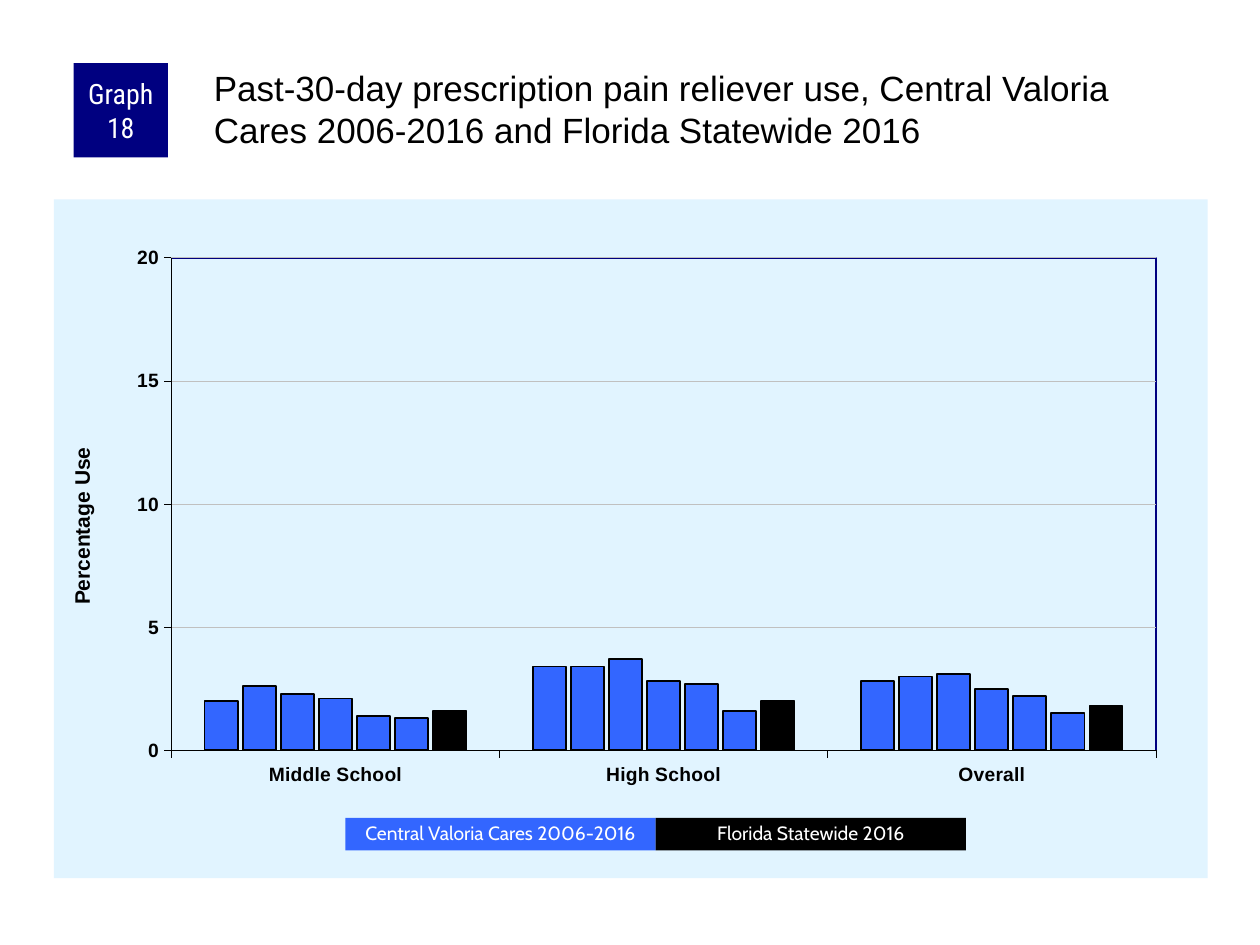
from dataclasses import dataclass

from pptx import Presentation
from pptx.chart.data import CategoryChartData
from pptx.dml.color import RGBColor
from pptx.enum.chart import XL_CHART_TYPE, XL_TICK_MARK
from pptx.enum.shapes import MSO_SHAPE
from pptx.enum.text import MSO_ANCHOR, MSO_AUTO_SIZE, PP_ALIGN
from pptx.oxml import parse_xml
from pptx.oxml.ns import nsdecls, qn
from pptx.util import Inches, Pt


@dataclass(frozen=True)
class Theme:
    black: str = "000000"
    white: str = "FFFFFF"
    navy: str = "000080"
    blue: str = "3366FF"
    pale: str = "E1F4FF"
    gray: str = "C0C0C0"
    sans: str = "Arial"
    slim: str = "Roboto Condensed"
    round: str = "Cabin"
    head: int = 20
    badge: int = 16
    label: int = 12
    small: int = 11
    base: int = 8


def apply(item, form):
    for name, value in form.items():
        setattr(item, name, value)


def ink(font, face, size, color, bold=False):
    apply(font, dict(name=face, size=Pt(size), bold=bold))
    font.color.rgb = RGBColor.from_string(color)


def stroke(line, color, width):
    line.color.rgb = RGBColor.from_string(color)
    line.width = Pt(width)


def paint(fill, color):
    fill.solid()
    fill.fore_color.rgb = RGBColor.from_string(color)


def layout(x, y, w=None, h=None, inner=False):
    marks = [("layoutTarget", "inner")] if inner else []
    marks += [("xMode", "edge"), ("yMode", "edge"), ("x", x), ("y", y)]
    marks += [(key, size) for key, size in (("w", w), ("h", h)) if size]
    body = "".join(f'<c:{key} val="{val}"/>' for key, val in marks)
    return parse_xml(f'<c:layout {nsdecls("c")}><c:manualLayout>{body}'
                     '</c:manualLayout></c:layout>')


def look(fill, line):
    return parse_xml(f'<c:spPr {nsdecls("c", "a")}>{fill}{line}</c:spPr>')


def solid(color):
    return f'<a:solidFill><a:srgbClr val="{color}"/></a:solidFill>'


def drop(parent, tag):
    for node in parent.findall(qn(tag)):
        parent.remove(node)


class Deck:
    COLS, ROWS = 120, 90

    def __init__(self, theme):
        self.theme = theme
        self.show = Presentation()
        apply(self.show, dict(slide_width=Inches(10), slide_height=Inches(7.5)))
        self.slide = self.show.slides.add_slide(self.show.slide_layouts[5])

    def place(self, col, row, wide, high):
        across = self.show.slide_width / self.COLS
        down = self.show.slide_height / self.ROWS
        return [round(n) for n in
                (col * across, row * down, wide * across, high * down)]

    def title(self, text, *grid):
        shape = self.slide.shapes.title
        apply(shape, dict(zip(("left", "top", "width", "height"),
                              self.place(*grid))))
        frame = shape.text_frame
        apply(frame, dict(text=text, word_wrap=True,
                          auto_size=MSO_AUTO_SIZE.NONE,
                          vertical_anchor=MSO_ANCHOR.TOP,
                          margin_left=Inches(0.03), margin_top=Inches(0.03),
                          margin_right=0, margin_bottom=0))
        para = frame.paragraphs[0]
        apply(para, dict(alignment=PP_ALIGN.LEFT, line_spacing=1.0))
        ink(para.runs[0].font, self.theme.sans, self.theme.head,
            self.theme.black)

    def box(self, text, grid, color, face, size, space=1.0):
        shape = self.slide.shapes.add_shape(MSO_SHAPE.RECTANGLE,
                                            *self.place(*grid))
        shape.shadow.inherit = False
        paint(shape.fill, color)
        shape.line.fill.background()
        frame = shape.text_frame
        apply(frame, dict(text=text, word_wrap=True,
                          vertical_anchor=MSO_ANCHOR.MIDDLE,
                          margin_left=Inches(0.05), margin_right=Inches(0.05),
                          margin_top=0, margin_bottom=0))
        para = frame.paragraphs[0]
        apply(para, dict(alignment=PP_ALIGN.CENTER, line_spacing=space))
        ink(para.runs[0].font, face, size, self.theme.white)

    def bars(self, cats, rows, colors, label, *grid):
        theme = self.theme
        data = CategoryChartData()
        data.categories = cats
        for num, row in enumerate(rows, 1):
            data.add_series(f"Series {num}", row)
        chart = self.slide.shapes.add_chart(
            XL_CHART_TYPE.COLUMN_CLUSTERED, *self.place(*grid), data).chart
        apply(chart, dict(has_legend=False, has_title=False))
        ink(chart.font, theme.sans, theme.base, theme.black)

        plot = chart.plots[0]
        apply(plot, dict(gap_width=200, overlap=-15, vary_by_categories=False))
        for series, color in zip(plot.series, colors):
            paint(series.format.fill, color)
            stroke(series.format.line, theme.black, 1)

        for axis in (chart.category_axis, chart.value_axis):
            apply(axis, dict(major_tick_mark=XL_TICK_MARK.OUTSIDE,
                             minor_tick_mark=XL_TICK_MARK.NONE))
            ink(axis.tick_labels.font, theme.sans, theme.small, theme.black,
                True)
            stroke(axis.format.line, theme.black, 0.25)
        axis = chart.value_axis
        apply(axis, dict(minimum_scale=0, maximum_scale=20, major_unit=5,
                         has_major_gridlines=True, has_title=True))
        stroke(axis.major_gridlines.format.line, theme.gray, 0.25)
        frame = axis.axis_title.text_frame
        frame.text = label
        ink(frame.paragraphs[0].runs[0].font, theme.sans, theme.label,
            theme.black, True)
        self.frame(chart, axis)

    def frame(self, chart, axis):
        theme = self.theme
        title = axis.axis_title._element
        drop(title, "c:layout")
        title.find(qn("c:tx")).addnext(layout(0.01, 0.36))
        root = chart._chartSpace
        body = root.find(qn("c:chart"))
        area = body.find(qn("c:plotArea"))
        drop(area, "c:layout")
        area.insert(0, layout(0.102, 0.086, 0.853, 0.726, True))
        area.append(look("<a:noFill/>",
                         f'<a:ln w="{Pt(1)}">{solid(theme.navy)}</a:ln>'))
        body.addnext(look(solid(theme.pale), "<a:ln><a:noFill/></a:ln>"))


def main():
    theme = Theme()
    deck = Deck(theme)
    deck.bars(
        ["Middle School", "High School", "Overall"],
        [(2, 3.4, 2.8), (2.6, 3.4, 3), (2.3, 3.7, 3.1), (2.1, 2.8, 2.5),
         (1.4, 2.7, 2.2), (1.3, 1.6, 1.5), (1.6, 2, 1.8)],
        [theme.blue] * 6 + [theme.black],
        "Percentage Use", 5.12, 18.98, 109.9, 64.65)
    deck.box("Graph 18", (7, 6, 9, 9), theme.navy, theme.slim, theme.badge)
    deck.title("Past-30-day prescription pain reliever use, Central Valoria "
               "Cares 2006-2016 and Florida Statewide 2016", 20, 6, 95, 10)
    left, wide = 32.9, 29.55
    keys = [("Central Valoria Cares 2006-2016", theme.blue),
            ("Florida Statewide 2016", theme.black)]
    for num, (text, color) in enumerate(keys):
        deck.box(text, (left + num * wide, 77.9, wide, 3.1), color,
                 theme.round, theme.small, 0.9)
    deck.show.save("out.pptx")


if __name__ == "__main__":
    main()
